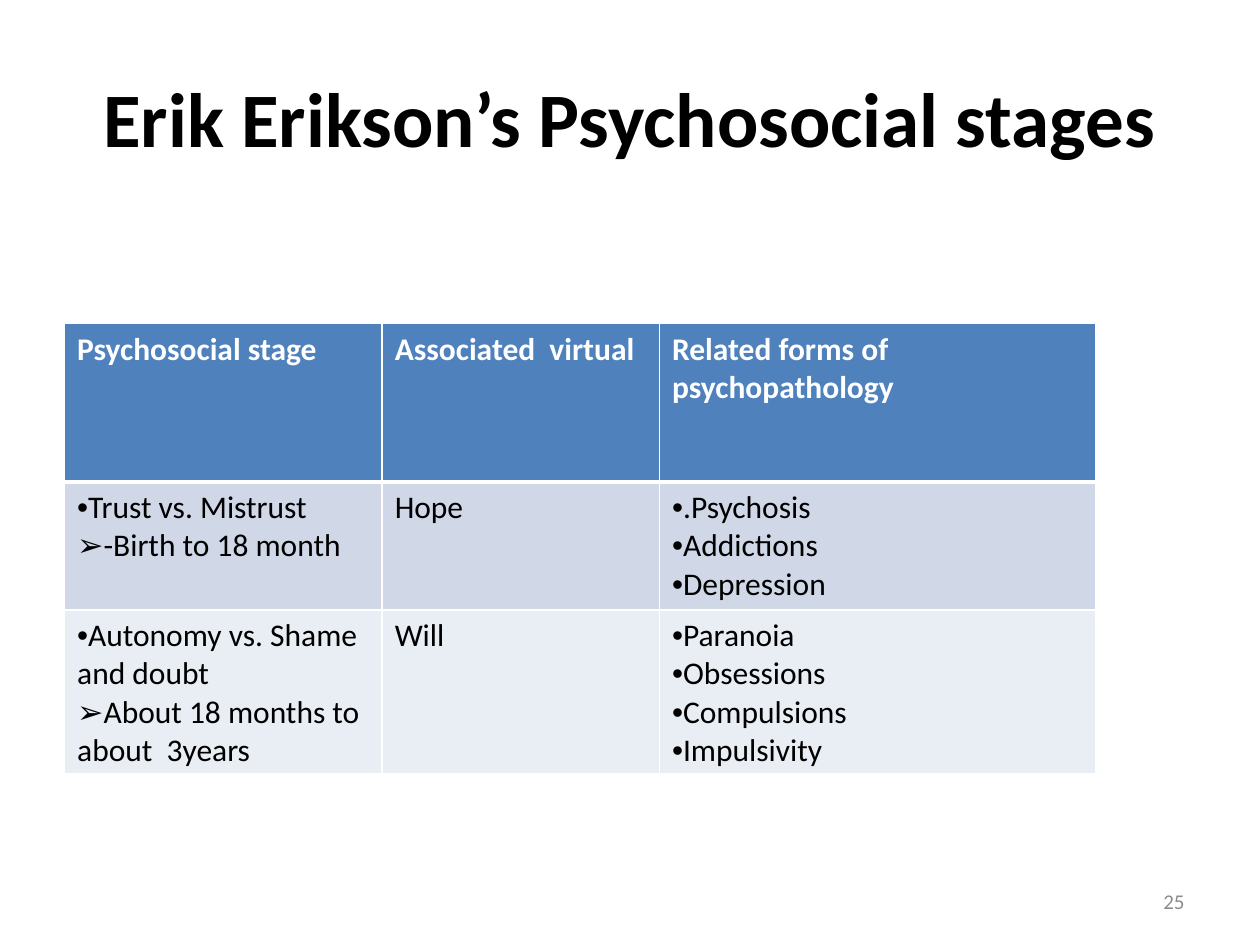
from lxml.etree import SubElement
from pptx import Presentation
from pptx.dml.color import RGBColor
from pptx.enum.text import MSO_ANCHOR, PP_ALIGN
from pptx.oxml.ns import qn
from pptx.util import Pt

BLACK = RGBColor(0, 0, 0)
WHITE = RGBColor(255, 255, 255)
GRAY = RGBColor(0x8C, 0x8C, 0x8C)
BLUE = RGBColor(0x4F, 0x81, 0xBD)
BANDS = [RGBColor(0xD0, 0xD8, 0xE8), RGBColor(0xE9, 0xED, 0xF4)]
FONT = "Calibri"

TITLE = "Erik Erikson’s Psychosocial stages"
NUMBER = "25"
MARKS = "•➢"  # a line that starts with one of these is a bullet
ROWS = [
    ["Psychosocial stage", "Associated  virtual", "Related forms of psychopathology"],
    ["•Trust vs. Mistrust\n➢-Birth to 18 month", "Hope",
     "•.Psychosis\n•Addictions\n•Depression"],
    ["•Autonomy vs. Shame and doubt\n➢About 18 months to about  3years", "Will",
     "•Paranoia\n•Obsessions\n•Compulsions\n•Impulsivity"],
]
WIDTHS = [181.5, 158.5, 249.5]
HEIGHTS = [90.5, 73, 93]


def add_bullet(para, mark):
    props = para._p.get_or_add_pPr()
    props.set("marL", "0")
    props.set("indent", "0")
    SubElement(props, qn("a:buFont"), typeface="Arial")
    SubElement(props, qn("a:buChar"), char=mark)


def write(frame, text, size=18, color=BLACK, bold=False, align=PP_ALIGN.LEFT):
    frame.word_wrap = True
    for i, line in enumerate(text.split("\n")):
        para = frame.add_paragraph() if i else frame.paragraphs[0]
        para.alignment = align
        if line[0] in MARKS:
            add_bullet(para, line[0])
            line = line[1:]
        run = para.add_run()
        run.text = line
        font = run.font
        font.name, font.size, font.bold = FONT, Pt(size), bold
        font.color.rgb = color


def add_text(slide, text, left, top, width, height, **style):
    box = slide.shapes.add_textbox(Pt(left), Pt(top), Pt(width), Pt(height))
    box.text_frame.vertical_anchor = MSO_ANCHOR.MIDDLE
    write(box.text_frame, text, **style)


def add_edges(cell, **widths):
    """Draw white borders; keys are L, R, T and B, in that order."""
    props = cell._tc.get_or_add_tcPr()
    for side, width in widths.items():
        line = SubElement(props, qn("a:ln" + side), w=str(Pt(width)))
        fill = SubElement(line, qn("a:solidFill"))
        SubElement(fill, qn("a:srgbClr"), val=str(WHITE))


def add_stages(slide, left, top):
    table = slide.shapes.add_table(
        len(ROWS), len(WIDTHS), Pt(left), Pt(top),
        Pt(sum(WIDTHS)), Pt(sum(HEIGHTS))).table
    for col, width in zip(table.columns, WIDTHS):
        col.width = Pt(width)
    for r, texts in enumerate(ROWS):
        table.rows[r].height = Pt(HEIGHTS[r])
        head = r == 0
        for c, text in enumerate(texts):
            cell = table.cell(r, c)
            add_edges(cell, L=1, R=1, T=3 if r == 1 else 1, B=3 if head else 1)
            cell.fill.solid()
            cell.fill.fore_color.rgb = BLUE if head else BANDS[(r - 1) % 2]
            write(cell.text_frame, text, color=WHITE if head else BLACK, bold=head)


def main():
    deck = Presentation()
    deck.slide_width, deck.slide_height = Pt(720), Pt(540)
    slide = deck.slides.add_slide(deck.slide_layouts[6])
    add_text(slide, TITLE, 36, 21.6, 648, 90, size=44, bold=True, align=PP_ALIGN.CENTER)
    add_stages(slide, 36.9, 185)
    add_text(slide, NUMBER, 516, 500.5, 168, 28.75, size=12, color=GRAY,
             align=PP_ALIGN.RIGHT)
    deck.save("out.pptx")


if __name__ == "__main__":
    main()
